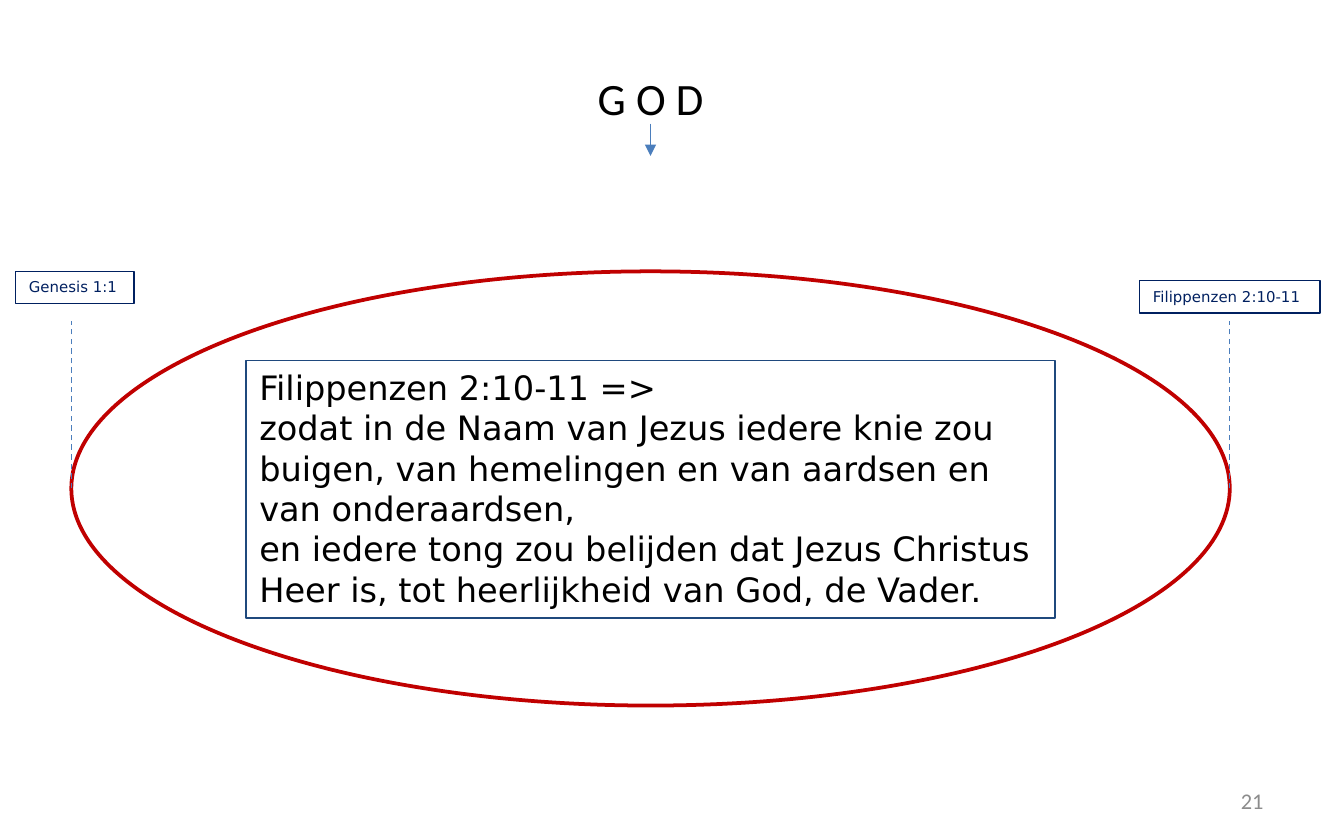
from lxml.etree import SubElement
from pptx import Presentation
from pptx.dml.color import RGBColor
from pptx.enum.dml import MSO_LINE
from pptx.enum.shapes import MSO_CONNECTOR, MSO_SHAPE
from pptx.enum.text import MSO_ANCHOR, MSO_AUTO_SIZE, PP_ALIGN
from pptx.oxml.ns import qn
from pptx.util import Pt

# Content
TITLE = "G O D"
PAGE = "21"
VERSE = [
    "Filippenzen 2:10-11 =>",
    "zodat in de Naam van Jezus iedere knie zou buigen, "
    "van hemelingen en van aardsen en van onderaardsen,",
    "en iedere tong zou belijden dat Jezus Christus Heer is, "
    "tot heerlijkheid van God, de Vader.",
]
LABELS = [  # text, left, top, width, height
    ("Genesis 1:1", 8.4, 145.4, 63.4, 17.3),
    ("Filippenzen 2:10-11", 610.6, 150.4, 96.5, 17.3),
]
OVAL = (38.2, 145.4, 620.6, 232.6)
BOX = (131.8, 193, 433.4, 138.2)
COLORS = {"black": "000000", "white": "FFFFFF", "gray": "8C8C8C", "red": "C00000",
          "blue": "4B7EBC", "navy": "002060", "edge": "1F497D"}


def color(name):
    return RGBColor.from_string(COLORS[name])


def write(shape, lines, font, size, ink, align=PP_ALIGN.LEFT, anchor=MSO_ANCHOR.TOP, wrap=True):
    frame = shape.text_frame
    frame.text = "\n".join(lines)
    frame.word_wrap = wrap
    frame.auto_size = MSO_AUTO_SIZE.NONE
    frame.vertical_anchor = anchor
    for para in frame.paragraphs:
        para.alignment = align
        para.font.name = font
        para.font.size = Pt(size)
        para.font.color.rgb = color(ink)


def draw(kind, place, edge, width, fill=None):
    shape = slide.shapes.add_shape(kind, *map(Pt, place))
    shape.shadow.inherit = False
    shape.line.color.rgb = color(edge)
    shape.line.width = Pt(width)
    if fill:
        shape.fill.solid()
        shape.fill.fore_color.rgb = color(fill)
    else:
        shape.fill.background()
    return shape


def link(*ends):
    line = slide.shapes.add_connector(MSO_CONNECTOR.STRAIGHT, *map(Pt, ends))
    line.line.color.rgb = color("blue")
    line.line.width = Pt(0.75)
    SubElement(line._element.spPr, qn("a:effectLst"))
    return line


deck = Presentation()
deck.slide_width, deck.slide_height = Pt(720), Pt(450)
slide = deck.slides.add_slide(deck.slide_layouts[5])
left, top, width, height = OVAL
mid = left + width / 2

# Title with the arrow below it
title = slide.shapes.title
title.left, title.top, title.width, title.height = map(Pt, (mid - 39.6, 32.4, 79.2, 39.6))
write(title, [TITLE], "Calibri", 24, "black", PP_ALIGN.CENTER, MSO_ANCHOR.MIDDLE, False)
arrow = link(mid, 66.3, mid, 83.5)
SubElement(arrow.line._get_or_add_ln(), qn("a:tailEnd"), type="triangle")

# Oval and verse
draw(MSO_SHAPE.OVAL, OVAL, "red", 2)
box = draw(MSO_SHAPE.RECTANGLE, BOX, "edge", 0.75, "white")
write(box, VERSE, "DejaVu Sans", 18, "black")

# Dashed lines up from both ends of the oval
for x in (left, left + width):
    link(x, top + height / 2, x, 172).line.dash_style = MSO_LINE.DASH

# Reference labels
for text, *place in LABELS:
    label = draw(MSO_SHAPE.RECTANGLE, place, "navy", 0.75, "white")
    write(label, [text], "DejaVu Sans", 8, "navy")

# Page number
page = slide.shapes.add_textbox(Pt(516), Pt(417), Pt(168), Pt(24))
write(page, [PAGE], "Calibri", 12, "gray", PP_ALIGN.RIGHT, MSO_ANCHOR.MIDDLE)

deck.save("out.pptx")
